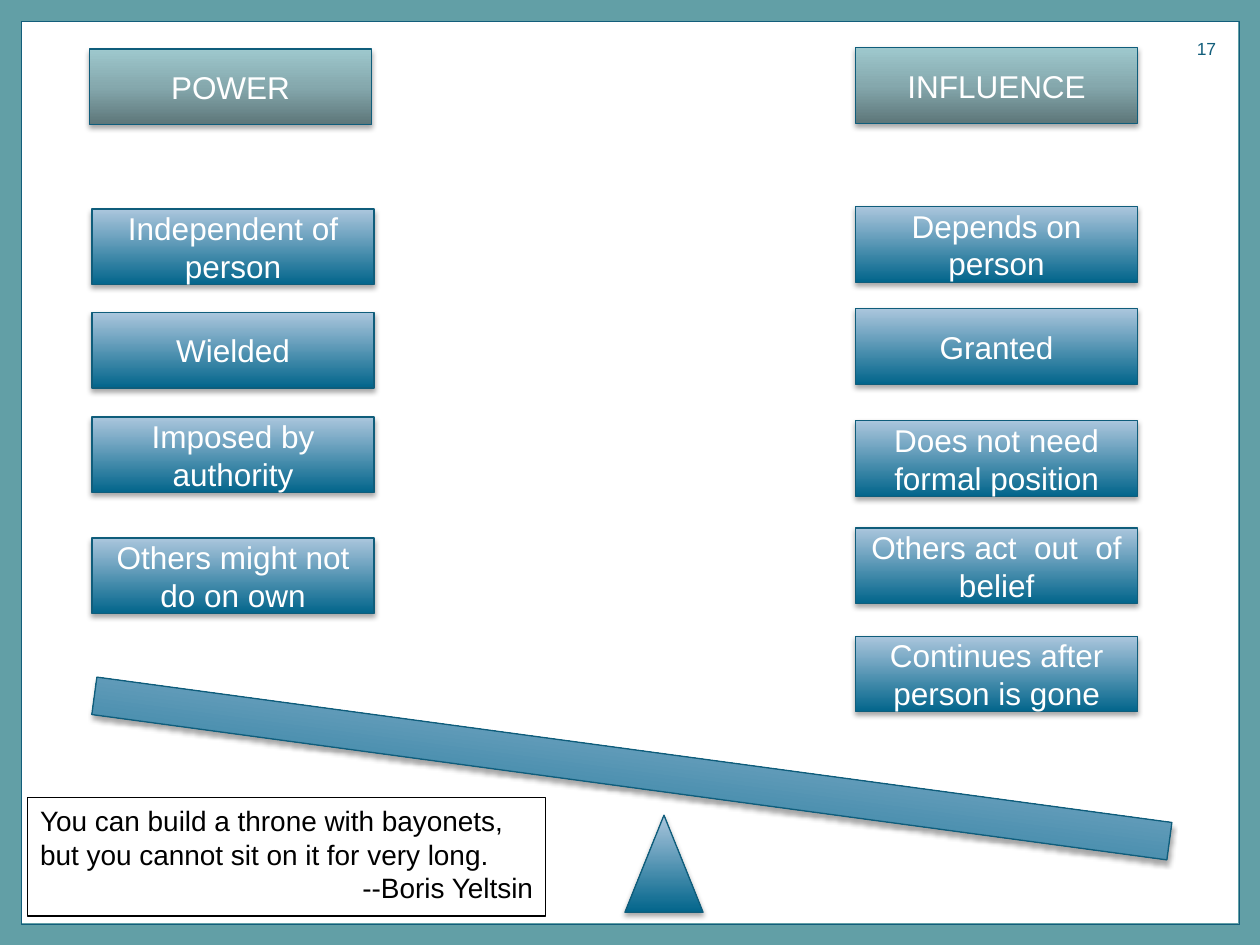
from copy import deepcopy
from pptx import Presentation
from pptx.dml.color import RGBColor
from pptx.enum.shapes import MSO_SHAPE
from pptx.enum.text import MSO_ANCHOR, MSO_AUTO_SIZE, PP_ALIGN
from pptx.oxml import parse_xml
from pptx.oxml.ns import nsdecls, qn
from pptx.util import Inches, Pt

COLOURS = {
    "frame": "629FA6", "inner": "125E7B", "edge": "0F5D7B",
    "white": "FFFFFF", "black": "000000",
}
BLUE = ["02658B", "ABC6DD"]
TEAL = ["5D7679", "85A8AD", "9EC8CD"]

deck = Presentation()
deck.slide_width, deck.slide_height = Inches(10), Inches(7.5)
COLUMN, ROW = deck.slide_width / 10, deck.slide_height / 7.5
slide = deck.slides.add_slide(deck.slide_layouts[6])


def add_block(preset, left, top, width, height, edge, weight=0.75, ramp=()):
    block = slide.shapes.add_shape(
        preset, int(left * COLUMN), int(top * ROW), int(width * COLUMN), int(height * ROW))
    block.shadow.inherit = False
    block.line.color.rgb = RGBColor.from_string(COLOURS[edge])
    block.line.width = Pt(weight)
    if not ramp:
        block.fill.background()
        return block
    block.fill.gradient()
    block.fill.gradient_angle = 90
    if len(ramp) == 3:
        first_stop = block.element.spPr.find(".//" + qn("a:gs"))
        first_stop.addnext(deepcopy(first_stop))
    for index, (stop, colour) in enumerate(zip(block.fill.gradient_stops, ramp)):
        stop.position = index / (len(ramp) - 1)
        stop.color.rgb = RGBColor.from_string(colour)
    block.element.spPr.find(qn("a:effectLst")).append(parse_xml(
        f'<a:outerShdw {nsdecls("a")} blurRad="{Pt(3.1)}" dist="{Pt(1.8)}" dir="5400000" '
        f'rotWithShape="0"><a:srgbClr val="{COLOURS["black"]}"><a:alpha val="35000"/>'
        '</a:srgbClr></a:outerShdw>'))
    return block


def write(holder, lines, size, colour, anchor=MSO_ANCHOR.TOP):
    frame = holder.text_frame
    for name, value in {"word_wrap": True, "vertical_anchor": anchor}.items():
        setattr(frame, name, value)
    for index, (words, alignment) in enumerate(lines):
        paragraph = frame.add_paragraph() if index else frame.paragraphs[0]
        paragraph.text = words
        paragraph.alignment = alignment
        for name, value in {"name": "Arial", "size": Pt(size)}.items():
            setattr(paragraph.font, name, value)
        paragraph.font.color.rgb = RGBColor.from_string(COLOURS[colour])


add_block(MSO_SHAPE.RECTANGLE, 0, 0, 10, 7.5, "frame", 25)
add_block(MSO_SHAPE.RECTANGLE, 0.17, 0.17, 9.67, 7.17, "inner")

page_number = slide.shapes.add_textbox(
    int(9.33 * COLUMN), int(0.25 * ROW), int(0.42 * COLUMN), int(0.4 * ROW))
write(page_number, [("17", PP_ALIGN.RIGHT)], 10, "inner")

add_block(MSO_SHAPE.ISOSCELES_TRIANGLE, 4.96, 6.47, 0.62, 0.77, "edge", ramp=BLUE)
beam = add_block(MSO_SHAPE.RECTANGLE, 0.71, 5.95, 8.61, 0.3, "edge", ramp=BLUE)
beam.rotation = 7.7

sides = [
    [("POWER", 0.71, 0.39, TEAL),
     ("Independent of person", 0.73, 1.66, BLUE),
     ("Wielded", 0.73, 2.48, BLUE),
     ("Imposed by authority", 0.73, 3.31, BLUE),
     ("Others might not do on own", 0.73, 4.27, BLUE)],
    [("INFLUENCE", 6.79, 0.38, TEAL),
     ("Depends on person", 6.79, 1.64, BLUE),
     ("Granted", 6.79, 2.45, BLUE),
     ("Does not need formal position", 6.79, 3.34, BLUE),
     ("Others act  out  of belief", 6.79, 4.19, BLUE),
     ("Continues after person is gone", 6.79, 5.05, BLUE)],
]
for side in sides:
    for trait, left, top, ramp in side:
        weight_block = add_block(MSO_SHAPE.RECTANGLE, left, top, 2.24, 0.6, "edge", ramp=ramp)
        write(weight_block, [(trait, PP_ALIGN.CENTER)], 18, "white", MSO_ANCHOR.MIDDLE)

quote = add_block(MSO_SHAPE.RECTANGLE, 0.22, 6.33, 4.11, 0.94, "black")
write(quote, [
    ("You can build a throne with bayonets, but you cannot sit on it for very long.",
     PP_ALIGN.LEFT),
    ("--Boris Yeltsin", PP_ALIGN.RIGHT),
], 16, "black")
quote.text_frame.auto_size = MSO_AUTO_SIZE.SHAPE_TO_FIT_TEXT

deck.save("out.pptx")
